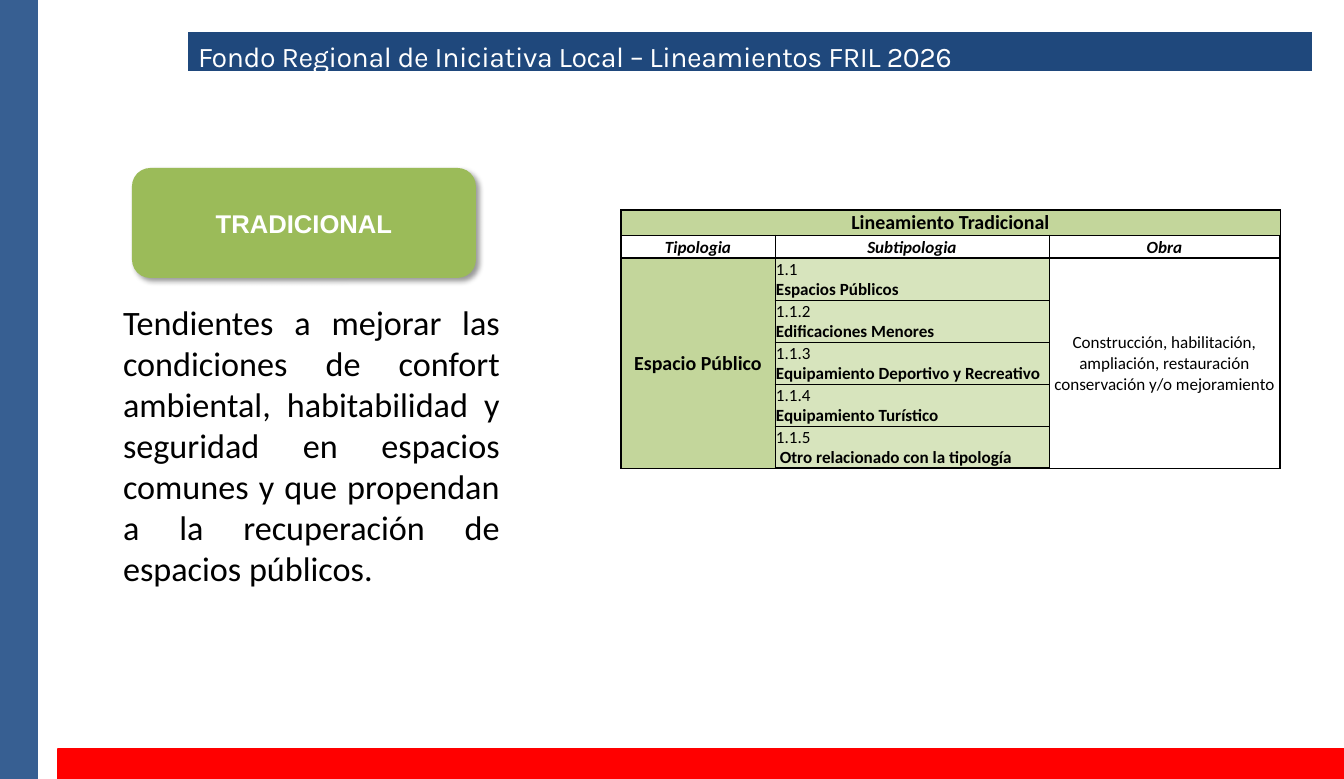
from pptx import Presentation
from pptx.dml.color import RGBColor
from pptx.enum.shapes import MSO_SHAPE as SHAPE
from pptx.enum.text import MSO_ANCHOR as ANCHOR, MSO_AUTO_SIZE as AUTO, PP_ALIGN as ALIGN
from pptx.oxml import parse_xml
from pptx.oxml.ns import nsdecls, qn
from pptx.util import Pt

BLACK, WHITE = RGBColor(0, 0, 0), RGBColor(255, 255, 255)
BLUE, RED, NAVY = RGBColor(0x37, 0x5F, 0x92), RGBColor(255, 0, 0), RGBColor(0x1F, 0x48, 0x7C)
GREEN = RGBColor(0x9B, 0xBB, 0x59)
MID_GREEN, PALE_GREEN = RGBColor(0xC3, 0xD6, 0x9B), RGBColor(0xD7, 0xE4, 0xBD)

TITLE = "Fondo Regional de Iniciativa Local – Lineamientos FRIL 2026"
LABEL = "TRADICIONAL"
DESCRIPTION = ("Tendientes a mejorar las condiciones de confort ambiental, habitabilidad y seguridad "
               "en espacios comunes y que propendan a la recuperación de espacios públicos.")
TABLE_TITLE = "Lineamiento Tradicional"
HEADINGS = ["Tipologia", "Subtipologia", "Obra"]
TYPOLOGY = "Espacio Público"
SUBTYPES = [
    ("1.1", "Espacios Públicos"),
    ("1.1.2", "Edificaciones Menores"),
    ("1.1.3", "Equipamiento Deportivo y Recreativo"),
    ("1.1.4", "Equipamiento Turístico"),
    ("1.1.5", " Otro relacionado con la tipología"),
]
WORKS = "Construcción, habilitación, ampliación, restauración conservación y/o mejoramiento"

# Lengths in px: left, top, width, height
SLIDE = (1344, 779)
BARS = [((0, 0, 37, 779), BLUE), ((58, 749, 1286, 30), RED)]
TITLE_BOX = (188, 32, 1124, 39)
LABEL_BOX = (132, 168, 344, 110)
TEXT_BOX = (113, 296, 397, 206)
TABLE_AT = (621, 210)
COLUMNS = [154, 274, 231]
ROWS = [25, 23] + [42] * len(SUBTYPES)

BODY = dict(name="Calibri", size=Pt(12), bold=False, italic=False)
BOLD = {**BODY, "bold": True}
HEADING = {**BOLD, "italic": True}
LARGE = {**BOLD, "size": Pt(14)}


def px(n):
    return round(n * 914400 / 102.5)


def box(rect):
    return [px(n) for n in rect]


def set_margins(target, left, top, right, bottom):
    for side, n in dict(left=left, top=top, right=right, bottom=bottom).items():
        setattr(target, f"margin_{side}", px(n))


def write(p, text, style, color=BLACK, align=ALIGN.LEFT):
    p.alignment = align
    r = p.add_run()
    r.text = text
    for name, value in style.items():
        setattr(r.font, name, value)
    r.font.color.rgb = color
    return r


def add_block(slide, shape, rect, fill):
    sp = slide.shapes.add_shape(shape, *box(rect))
    sp.shadow.inherit = False
    sp.fill.solid()
    sp.fill.fore_color.rgb = fill
    sp.line.color.rgb = fill
    sp.line.width = Pt(2)
    return sp


def add_title(slide):
    sp = slide.shapes.title
    sp.left, sp.top, sp.width, sp.height = box(TITLE_BOX)
    sp.fill.solid()
    sp.fill.fore_color.rgb = NAVY
    tf = sp.text_frame
    tf.auto_size, tf.word_wrap, tf.vertical_anchor = AUTO.NONE, True, ANCHOR.TOP
    set_margins(tf, 10, 7, 0, 0)
    r = write(tf.paragraphs[0], TITLE, dict(name="Karla", size=Pt(20)), WHITE)
    r.font._element.set("spc", "-30")


def add_label(slide):
    sp = add_block(slide, SHAPE.ROUNDED_RECTANGLE, LABEL_BOX, GREEN)
    sp.line.fill.background()
    sp._element.spPr.find(qn("a:effectLst")).append(parse_xml(
        f'<a:outerShdw {nsdecls("a")} blurRad="{Pt(4)}" dist="{Pt(3)}" dir="2700000">'
        '<a:srgbClr val="000000"><a:alpha val="40000"/></a:srgbClr></a:outerShdw>'))
    sp.text_frame.vertical_anchor = ANCHOR.MIDDLE
    write(sp.text_frame.paragraphs[0], LABEL, dict(name="Arial", size=Pt(18), bold=True),
          WHITE, ALIGN.CENTER)


def add_description(slide):
    tf = slide.shapes.add_textbox(*box(TEXT_BOX)).text_frame
    tf.word_wrap = True
    write(tf.paragraphs[0], DESCRIPTION, dict(name="Calibri", size=Pt(24)), align=ALIGN.JUSTIFY)


def set_borders(cell, widths):
    """Draw black borders; widths gives points for the L, R, T and B sides."""
    tcPr = cell._tc.get_or_add_tcPr()
    for side, width in widths.items():
        tcPr.append(parse_xml(
            f'<a:ln{side} {nsdecls("a")} w="{Pt(width)}"><a:solidFill>'
            f'<a:srgbClr val="{BLACK}"/></a:solidFill></a:ln{side}>'))


def fill_cell(cell, lines, fill=WHITE, align=ALIGN.CENTER, anchor=ANCHOR.BOTTOM):
    """Write (text, style) lines as paragraphs over a fill."""
    cell.fill.solid()
    cell.fill.fore_color.rgb = fill
    cell.vertical_anchor = anchor
    tf = cell.text_frame
    for i, (text, style) in enumerate(lines):
        write(tf.add_paragraph() if i else tf.paragraphs[0], text, style, align=align)


def add_guidelines(slide):
    size = (sum(COLUMNS), sum(ROWS))
    table = slide.shapes.add_table(len(ROWS), len(COLUMNS), *box(TABLE_AT + size)).table
    table.first_row = table.horz_banding = False
    for col, width in zip(table.columns, COLUMNS):
        col.width = px(width)
    for row, height in zip(table.rows, ROWS):
        row.height = px(height)

    last_row, last_col = len(ROWS) - 1, len(COLUMNS) - 1
    for i in range(len(ROWS)):
        for j in range(len(COLUMNS)):
            cell = table.cell(i, j)
            set_margins(cell, 1, 1, 1, 0)
            thick = dict(L=j == 0, R=j == last_col, T=i in (0, 2), B=i in (1, last_row))
            set_borders(cell, {side: 1 if on else 0.5 for side, on in thick.items()})

    table.cell(0, 0).merge(table.cell(0, last_col))
    for j in (0, last_col):
        table.cell(2, j).merge(table.cell(last_row, j))

    fill_cell(table.cell(0, 0), [(TABLE_TITLE, LARGE)], MID_GREEN)
    for j, heading in enumerate(HEADINGS):
        fill_cell(table.cell(1, j), [(heading, HEADING)])
    fill_cell(table.cell(2, 0), [(TYPOLOGY, LARGE)], MID_GREEN, anchor=ANCHOR.MIDDLE)
    for i, (number, name) in enumerate(SUBTYPES, 2):
        fill_cell(table.cell(i, 1), [(number, BODY), (name, BOLD)], PALE_GREEN, ALIGN.LEFT)
    fill_cell(table.cell(2, last_col), [(WORKS, BODY)], anchor=ANCHOR.MIDDLE)


def main():
    prs = Presentation()
    prs.slide_width, prs.slide_height = box(SLIDE)
    slide = prs.slides.add_slide(prs.slide_layouts[5])
    for rect, color in BARS:
        add_block(slide, SHAPE.RECTANGLE, rect, color)
    add_title(slide)
    add_label(slide)
    add_description(slide)
    add_guidelines(slide)
    prs.save("out.pptx")


if __name__ == "__main__":
    main()
